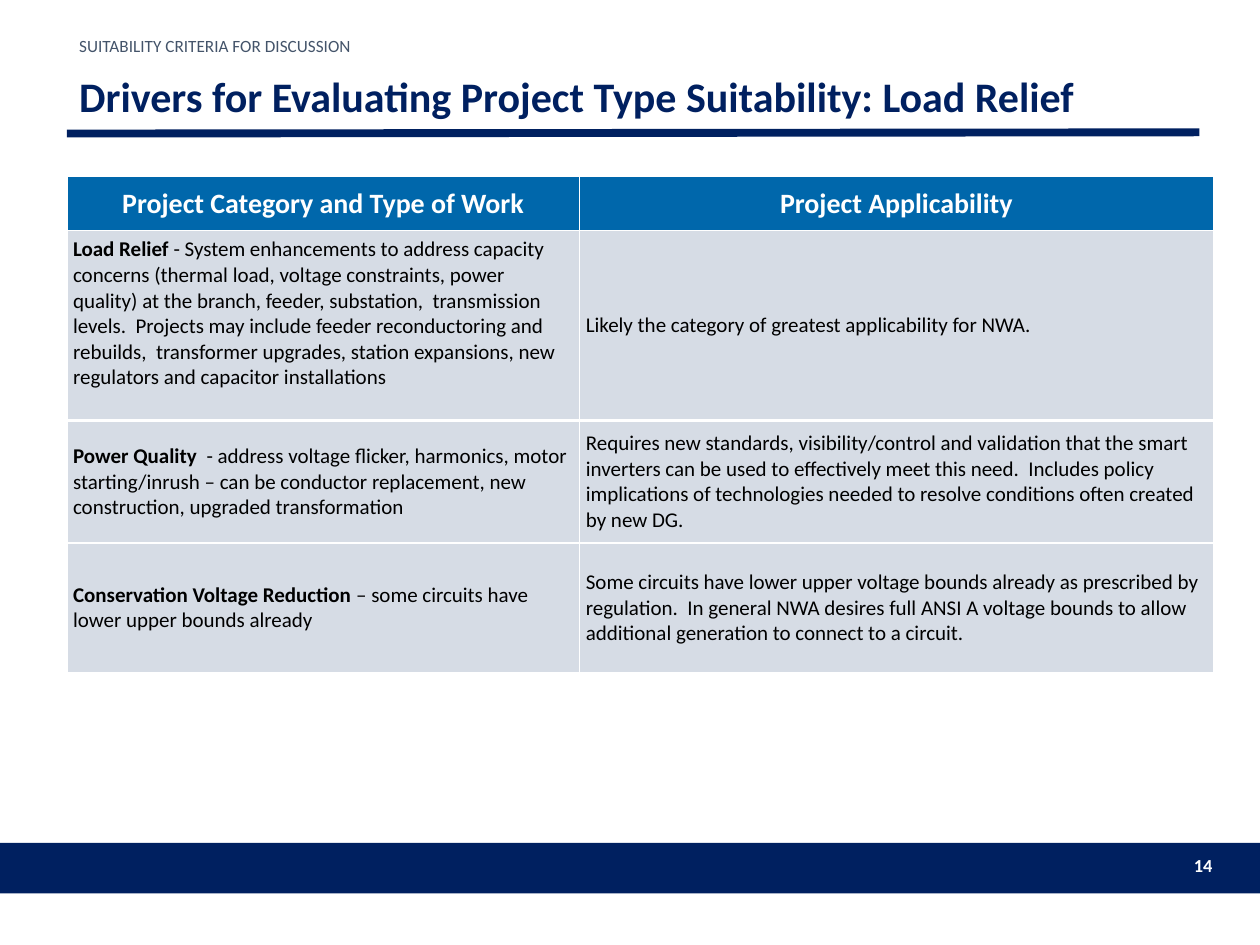
from dataclasses import dataclass

from lxml.etree import SubElement
from pptx import Presentation
from pptx.dml.color import RGBColor
from pptx.enum.shapes import MSO_CONNECTOR, MSO_SHAPE
from pptx.enum.text import MSO_ANCHOR, PP_ALIGN
from pptx.oxml.ns import qn
from pptx.slide import Slide
from pptx.table import _Cell
from pptx.util import Inches, Pt

FONT = "Calibri"
NAVY = "002060"
HEADER_BLUE = "0067AB"
ROW_GREY = "D6DCE5"
SLATE = "44546A"
WHITE = "FFFFFF"
BLACK = "000000"
TABLE_LEFT = 0.53
COLUMN_WIDTHS = (4.07, 5.03)


@dataclass
class TextStyle:
    size: float
    color: str
    bold: bool = False
    align: PP_ALIGN = PP_ALIGN.LEFT
    spacing: float = 1.0


@dataclass
class Driver:
    category: str
    work: str
    applicability: str
    height: float
    work_bottom: float = 0.05


LABEL = TextStyle(9.8, SLATE, spacing=0.7)
TITLE = TextStyle(24, NAVY, bold=True, spacing=0.9)
PAGE_NUMBER = TextStyle(10.5, WHITE, bold=True, align=PP_ALIGN.RIGHT)
HEADER = TextStyle(16, WHITE, bold=True, align=PP_ALIGN.CENTER)
BODY = TextStyle(12, BLACK)

HEADINGS = ("Project Category and Type of Work", "Project Applicability")
HEADING_HEIGHT = 0.43
LOAD_RELIEF = Driver(
    "Load Relief ",
    "- System enhancements to address capacity concerns (thermal load, voltage "
    "constraints, power quality) at the branch, feeder, substation,  transmission "
    "levels.  Projects may include feeder reconductoring and rebuilds,  transformer "
    "upgrades, station expansions, new regulators and capacitor installations",
    "Likely the category of greatest applicability for NWA.",
    height=1.5,
    work_bottom=0.25,
)
OTHER_DRIVERS = (
    Driver(
        "Power Quality  ",
        "- address voltage flicker, harmonics, motor starting/inrush – can be "
        "conductor replacement, new construction, upgraded transformation",
        "Requires new standards, visibility/control and validation that the smart "
        "inverters can be used to effectively meet this need.  Includes policy "
        "implications of technologies needed to resolve conditions often created "
        "by new DG.",
        height=0.97,
    ),
    Driver(
        "Conservation Voltage Reduction ",
        "– some circuits have lower upper bounds already",
        "Some circuits have lower upper voltage bounds already as prescribed by "
        "regulation.  In general NWA desires full ANSI A voltage bounds to allow "
        "additional generation to connect to a circuit.",
        height=1.03,
    ),
)


def rgb(color: str) -> RGBColor:
    return RGBColor.from_string(color)


def write(frame, text: str, style: TextStyle, lead: str = "") -> None:
    """Set one paragraph, with an optional bold lead before the text."""
    paragraph = frame.paragraphs[0]
    paragraph.text = lead or text
    if lead:
        paragraph.add_run().text = text
    paragraph.alignment = style.align
    paragraph.line_spacing = style.spacing
    for index, run in enumerate(paragraph.runs):
        run.font.name = FONT
        run.font.size = Pt(style.size)
        run.font.color.rgb = rgb(style.color)
        run.font.bold = style.bold or bool(lead and index == 0)


def add_text(slide: Slide, left: float, top: float, width: float, height: float,
             text: str, style: TextStyle, anchor=MSO_ANCHOR.TOP) -> None:
    box = slide.shapes.add_textbox(
        Inches(left), Inches(top), Inches(width), Inches(height))
    box.text_frame.word_wrap = True
    box.text_frame.vertical_anchor = anchor
    write(box.text_frame, text, style)


def format_cell(cell: _Cell, fill: str) -> None:
    """Centre the cell vertically, with white borders and a solid fill."""
    cell.vertical_anchor = MSO_ANCHOR.MIDDLE
    properties = cell._tc.get_or_add_tcPr()
    for side in ("a:lnL", "a:lnR", "a:lnT", "a:lnB"):
        border = SubElement(properties, qn(side), w=str(Pt(1)))
        solid = SubElement(border, qn("a:solidFill"))
        SubElement(solid, qn("a:srgbClr"), val=WHITE)
    cell.fill.solid()
    cell.fill.fore_color.rgb = rgb(fill)


def fill_driver_cell(cell: _Cell, text: str, lead: str = "",
                     bottom: float = 0.05) -> None:
    write(cell.text_frame, text, BODY, lead)
    cell.margin_left = cell.margin_right = cell.margin_top = Inches(0.05)
    cell.margin_bottom = Inches(bottom)
    format_cell(cell, ROW_GREY)


def add_driver_table(slide: Slide, top: float, drivers: tuple[Driver, ...],
                     headings: tuple[str, ...] = ()) -> None:
    heights = [HEADING_HEIGHT] if headings else []
    heights += [driver.height for driver in drivers]
    table = slide.shapes.add_table(
        len(heights), len(COLUMN_WIDTHS), Inches(TABLE_LEFT), Inches(top),
        Inches(sum(COLUMN_WIDTHS)), Inches(sum(heights))).table
    table.first_row = bool(headings)
    table.horz_banding = False
    for column, width in zip(table.columns, COLUMN_WIDTHS):
        column.width = Inches(width)
    for row, height in zip(table.rows, heights):
        row.height = Inches(height)
    for index, heading in enumerate(headings):
        cell = table.cell(0, index)
        write(cell.text_frame, heading, HEADER)
        format_cell(cell, HEADER_BLUE)
    for row, driver in enumerate(drivers, start=1 if headings else 0):
        fill_driver_cell(table.cell(row, 0), driver.work, driver.category,
                         driver.work_bottom)
        fill_driver_cell(table.cell(row, 1), driver.applicability)


def main() -> None:
    presentation = Presentation()
    presentation.slide_width = Inches(10)
    presentation.slide_height = Inches(7.5)
    slide = presentation.slides.add_slide(presentation.slide_layouts[6])

    # Footer band and page number
    footer = slide.shapes.add_shape(
        MSO_SHAPE.RECTANGLE, 0, Inches(6.69), Inches(10), Inches(0.4))
    footer.shadow.inherit = False
    footer.fill.solid()
    footer.fill.fore_color.rgb = rgb(NAVY)
    footer.line.fill.background()
    add_text(slide, 9.31, 6.73, 0.41, 0.29, "14", PAGE_NUMBER)

    # Heading and rule
    rule = slide.shapes.add_connector(
        MSO_CONNECTOR.STRAIGHT, Inches(0.53), Inches(1.06), Inches(9.52), Inches(1.05))
    rule.line.color.rgb = rgb(NAVY)
    rule.line.width = Pt(4.5)
    SubElement(rule._element.spPr, qn("a:effectLst"))
    add_text(slide, 0.53, 0.51, 8.99, 0.55,
             "Drivers for Evaluating Project Type Suitability: Load Relief",
             TITLE, MSO_ANCHOR.MIDDLE)
    add_text(slide, 0.53, 0.28, 8.99, 0.22,
             "SUITABILITY CRITERIA FOR DISCUSSION", LABEL)

    # Driver tables
    add_driver_table(slide, 1.4, (LOAD_RELIEF,), HEADINGS)
    add_driver_table(slide, 3.34, OTHER_DRIVERS)

    presentation.save("out.pptx")


if __name__ == "__main__":
    main()
